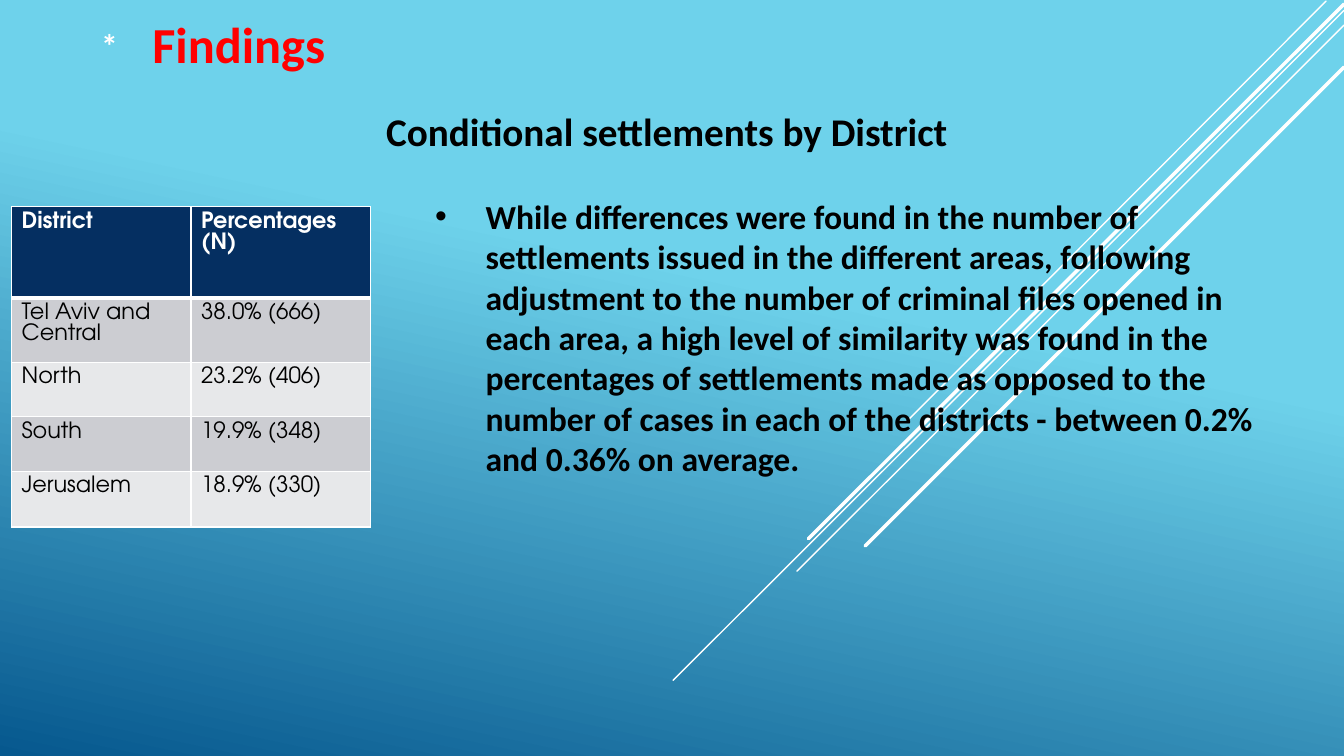
from lxml.etree import SubElement
from pptx import Presentation
from pptx.dml.color import RGBColor
from pptx.enum.shapes import MSO_CONNECTOR
from pptx.enum.text import MSO_ANCHOR, PP_ALIGN
from pptx.oxml.ns import qn
from pptx.util import Pt

EMU_PER_PX = 9525
COLORS = {
    "sky": "6ED2EB",
    "deep": "06588E",
    "navy": "052F61",
    "white": "FFFFFF",
    "black": "000000",
    "red": "FF0000",
    "dark_band": "CCCDD2",
    "light_band": "E7E8EA",
}
BEAMS = [
    (1263, 1, 864, 401, 1),
    (1280, 10, 641, 648, 1),
    (1280, 24, 759, 544, 1),
    (1280, 4, 770, 513, 2.5),
    (1280, 64, 824, 520, 2.5),
]
DISTRICTS = [
    ("District", "Percentages\n(N)"),
    ("Tel Aviv and Central", "38.0% (666)"),
    ("North", "23.2% (406)"),
    ("South", "19.9% (348)"),
    ("Jerusalem", "18.9% (330)"),
]
FINDING = (
    "While differences were found in the number of settlements issued in the "
    "different areas, following adjustment to the number of criminal files opened "
    "in each area, a high level of similarity was found in the percentages of "
    "settlements made as opposed to the number of cases in each of the districts "
    "- between 0.2% and 0.36% on average."
)


def px(length):
    return length * EMU_PER_PX


def rgb(name):
    return RGBColor.from_string(COLORS[name])


class SlideBuilder:
    body_font = "Calibri"
    table_font = "TeX Gyre Adventor"

    def __init__(self, presentation):
        self.slide = presentation.slides.add_slide(presentation.slide_layouts[6])

    def background(self, start, end, angle):
        fill = self.slide.background.fill
        fill.gradient()
        fill.gradient_angle = -angle % 360
        for stop, (color, position) in zip(fill.gradient_stops, (start, end)):
            stop.color.rgb = rgb(color)
            stop.position = position

    def line(self, x1, y1, x2, y2, width):
        connector = self.slide.shapes.add_connector(
            MSO_CONNECTOR.STRAIGHT, px(x1), px(y1), px(x2), px(y2)
        )
        connector.line.color.rgb = rgb("white")
        connector.line.width = Pt(width)
        connector.line._get_or_add_ln().set("cap", "rnd")
        SubElement(connector._element.spPr, qn("a:effectLst"))

    def run(self, paragraph, text, size, color, bold=True, font=body_font):
        run = paragraph.add_run()
        run.text = text
        run.font.name = font
        run.font.size = Pt(size)
        run.font.bold = bold
        run.font.color.rgb = rgb(color)

    def text(self, box, text, size, color, align=PP_ALIGN.LEFT, anchor=MSO_ANCHOR.TOP):
        shape = self.slide.shapes.add_textbox(*map(px, box))
        frame = shape.text_frame
        frame.word_wrap = True
        frame.vertical_anchor = anchor
        paragraph = frame.paragraphs[0]
        paragraph.alignment = align
        self.run(paragraph, text, size, color)
        return paragraph

    def bullet(self, paragraph, indent):
        properties = paragraph._p.get_or_add_pPr()
        properties.set("marL", str(px(indent)))
        properties.set("indent", str(-px(indent)))
        SubElement(properties, qn("a:buFont"), typeface="Arial")
        SubElement(properties, qn("a:buChar"), char="•")

    def borders(self, cell, widths):
        properties = cell._tc.get_or_add_tcPr()
        for position, (side, width) in enumerate(widths.items()):
            border = properties.makeelement(qn(f"a:{side}"), {"w": str(Pt(width))})
            fill = SubElement(border, qn("a:solidFill"))
            SubElement(fill, qn("a:srgbClr"), val=COLORS["white"])
            properties.insert(position, border)

    def cell(self, cell, text, fill, color, header):
        cell.fill.solid()
        cell.fill.fore_color.rgb = rgb(fill)
        for index, line in enumerate(text.split("\n")):
            frame = cell.text_frame
            paragraph = frame.add_paragraph() if index else frame.paragraphs[0]
            self.run(paragraph, line, 16, color, header, self.table_font)
        self.borders(cell, {"lnL": 1, "lnR": 1, "lnT": 1, "lnB": 3 if header else 1})

    def table(self, left, top, column_width, row_heights, rows):
        columns = len(rows[0])
        table = self.slide.shapes.add_table(
            len(rows), columns, px(left), px(top),
            px(column_width * columns), px(sum(row_heights)),
        ).table
        for column in table.columns:
            column.width = px(column_width)
        for index, (values, height) in enumerate(zip(rows, row_heights)):
            table.rows[index].height = px(height)
            header = index == 0
            fill = "navy" if header else "dark_band" if index % 2 else "light_band"
            color = "white" if header else "black"
            for column, value in enumerate(values):
                self.cell(table.cell(index, column), value, fill, color, header)


def main():
    presentation = Presentation()
    presentation.slide_width = px(1280)
    presentation.slide_height = px(720)
    builder = SlideBuilder(presentation)
    builder.background(("sky", 0.39), ("deep", 1), 102)
    for beam in BEAMS:
        builder.line(*beam)
    builder.text((72, 6, 311, 70), "Findings", 36, "red", PP_ALIGN.CENTER, MSO_ANCHOR.MIDDLE)
    marker = builder.text((87, 0, 1095, 61), "*", 24, "white")
    marker.line_spacing = 1.5
    builder.text(
        (297, 97, 676, 84), "Conditional settlements by District", 28, "black", PP_ALIGN.CENTER
    )
    finding = builder.text((405, 182, 819, 281), FINDING, 24, "black")
    builder.bullet(finding, 48)
    builder.table(11, 197, 171, [87, 61, 52, 52, 53], DISTRICTS)
    presentation.save("out.pptx")


if __name__ == "__main__":
    main()
